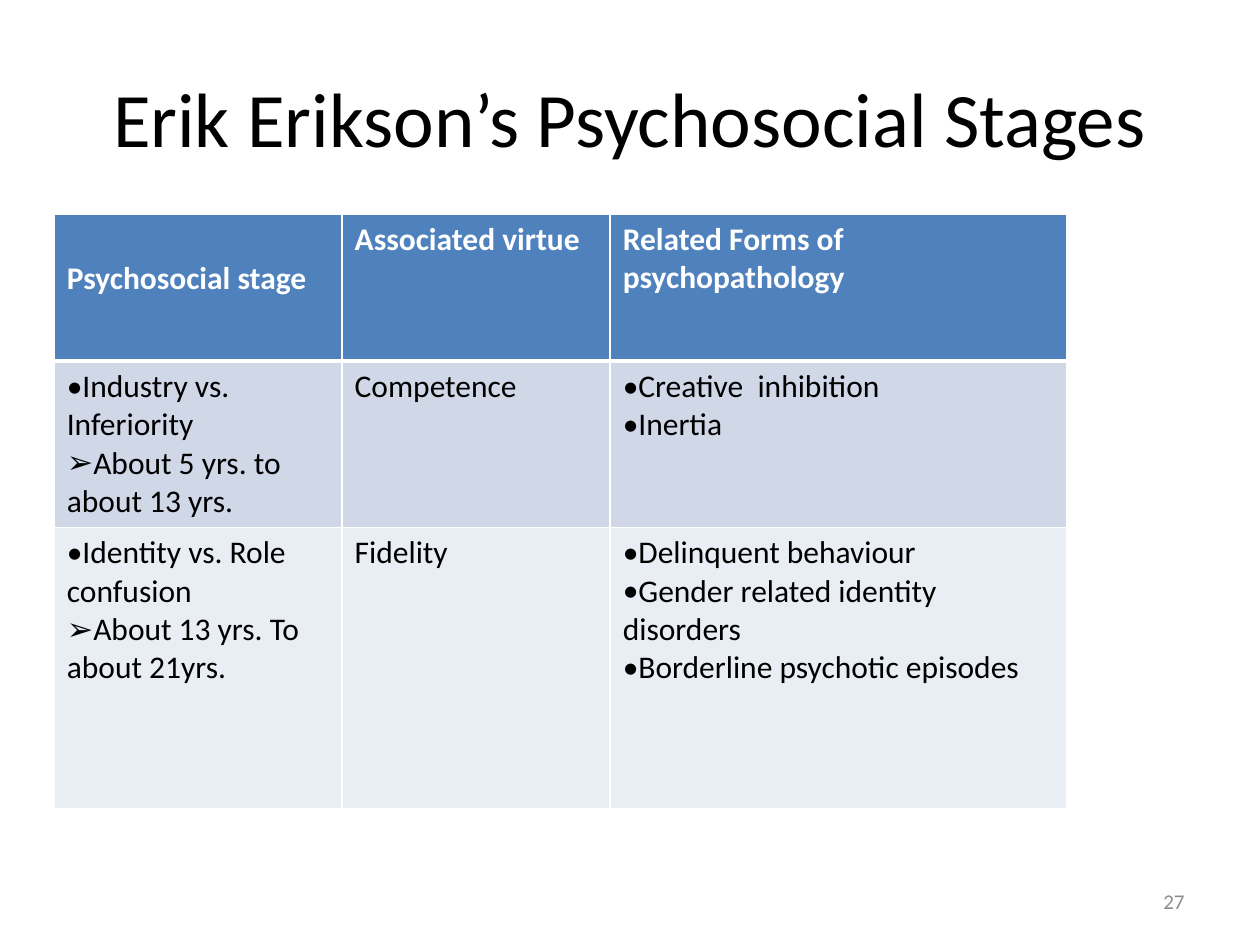
from lxml.etree import SubElement
from pptx import Presentation
from pptx.dml.color import RGBColor
from pptx.enum.text import MSO_ANCHOR, PP_ALIGN
from pptx.oxml.ns import qn
from pptx.util import Pt

FONT = "Calibri"
BLACK, WHITE, GREY = "000000", "FFFFFF", "8C8C8C"
HEADER_BLUE = "4F81BD"
BODY_BANDS = ["D0D8E8", "E9EDF4"]
COLUMN_WIDTHS = [164.5, 153.2, 260.8]
ROW_HEIGHTS = [83.8, 92.2, 160.6]

HEADINGS = ["Psychosocial stage", "Associated virtue",
            "Related Forms of psychopathology"]
# Each cell holds (bullet, text) pairs
STAGES = [
    [[("•", "Industry vs. Inferiority"), ("➢", "About 5 yrs. to about 13 yrs.")],
     [(None, "Competence")],
     [("•", "Creative  inhibition"), ("•", "Inertia")]],
    [[("•", "Identity vs. Role confusion"), ("➢", "About 13 yrs. To about 21yrs.")],
     [(None, "Fidelity")],
     [("•", "Delinquent behaviour"), ("•", "Gender related identity disorders"),
      ("•", "Borderline psychotic episodes")]],
]


def colour(hex_string):
    return RGBColor.from_string(hex_string)


def add_run(paragraph, text, size, hex_string, bold=False):
    run = paragraph.add_run()
    run.text = text
    run.font.name = FONT
    run.font.size = Pt(size)
    run.font.bold = bold
    run.font.color.rgb = colour(hex_string)


def add_bullet(paragraph, character):
    properties = paragraph._p.get_or_add_pPr()
    properties.set("marL", "0")
    properties.set("indent", "0")
    SubElement(properties, qn("a:buFont"), typeface=FONT)
    SubElement(properties, qn("a:buChar"), char=character)


def add_border(cell, side, width):
    line = SubElement(cell._tc.get_or_add_tcPr(), qn(f"a:ln{side}"), w=str(Pt(width)))
    fill = SubElement(line, qn("a:solidFill"))
    SubElement(fill, qn("a:srgbClr"), val=WHITE)


def fill_cell(cell, entries, background, ink, bold=False, top=1, bottom=1):
    for side, width in (("L", 1), ("R", 1), ("T", top), ("B", bottom)):
        add_border(cell, side, width)
    cell.fill.solid()
    cell.fill.fore_color.rgb = colour(background)
    frame = cell.text_frame
    for index, (bullet, text) in enumerate(entries):
        paragraph = frame.add_paragraph() if index else frame.paragraphs[0]
        if bullet:
            add_bullet(paragraph, bullet)
        add_run(paragraph, text, 18, ink, bold)


def add_title(slide, text):
    title = slide.shapes.title
    title.left, title.top, title.width, title.height = Pt(36), Pt(21.6), Pt(648), Pt(90)
    title.text_frame.vertical_anchor = MSO_ANCHOR.MIDDLE
    heading = title.text_frame.paragraphs[0]
    heading.alignment = PP_ALIGN.CENTER
    add_run(heading, text, 44, BLACK)


def add_stage_table(slide):
    table = slide.shapes.add_table(
        len(ROW_HEIGHTS), len(COLUMN_WIDTHS), Pt(31), Pt(122.4),
        Pt(sum(COLUMN_WIDTHS)), Pt(sum(ROW_HEIGHTS))).table
    for column, width in zip(table.columns, COLUMN_WIDTHS):
        column.width = Pt(width)
    for row, height in zip(table.rows, ROW_HEIGHTS):
        row.height = Pt(height)

    # Header row, with the first heading one line lower
    for column, heading in enumerate(HEADINGS):
        fill_cell(table.cell(0, column), [(None, heading)], HEADER_BLUE, WHITE,
                  bold=True, bottom=3)
    table.cell(0, 0).margin_top = Pt(25.6)

    # Stage rows
    for row, (stage, band) in enumerate(zip(STAGES, BODY_BANDS), start=1):
        for column, entries in enumerate(stage):
            fill_cell(table.cell(row, column), entries, band, BLACK,
                      top=3 if row == 1 else 1)


def add_page_number(slide, number):
    frame = slide.shapes.add_textbox(Pt(516), Pt(500.4), Pt(168), Pt(28.8)).text_frame
    frame.word_wrap = True
    frame.vertical_anchor = MSO_ANCHOR.MIDDLE
    frame.paragraphs[0].alignment = PP_ALIGN.RIGHT
    add_run(frame.paragraphs[0], number, 12, GREY)


def main():
    deck = Presentation()
    deck.slide_width, deck.slide_height = Pt(720), Pt(540)
    slide = deck.slides.add_slide(deck.slide_layouts.get_by_name("Title Only"))
    add_title(slide, "Erik Erikson’s Psychosocial Stages")
    add_stage_table(slide)
    add_page_number(slide, "27")
    deck.save("out.pptx")


if __name__ == "__main__":
    main()
